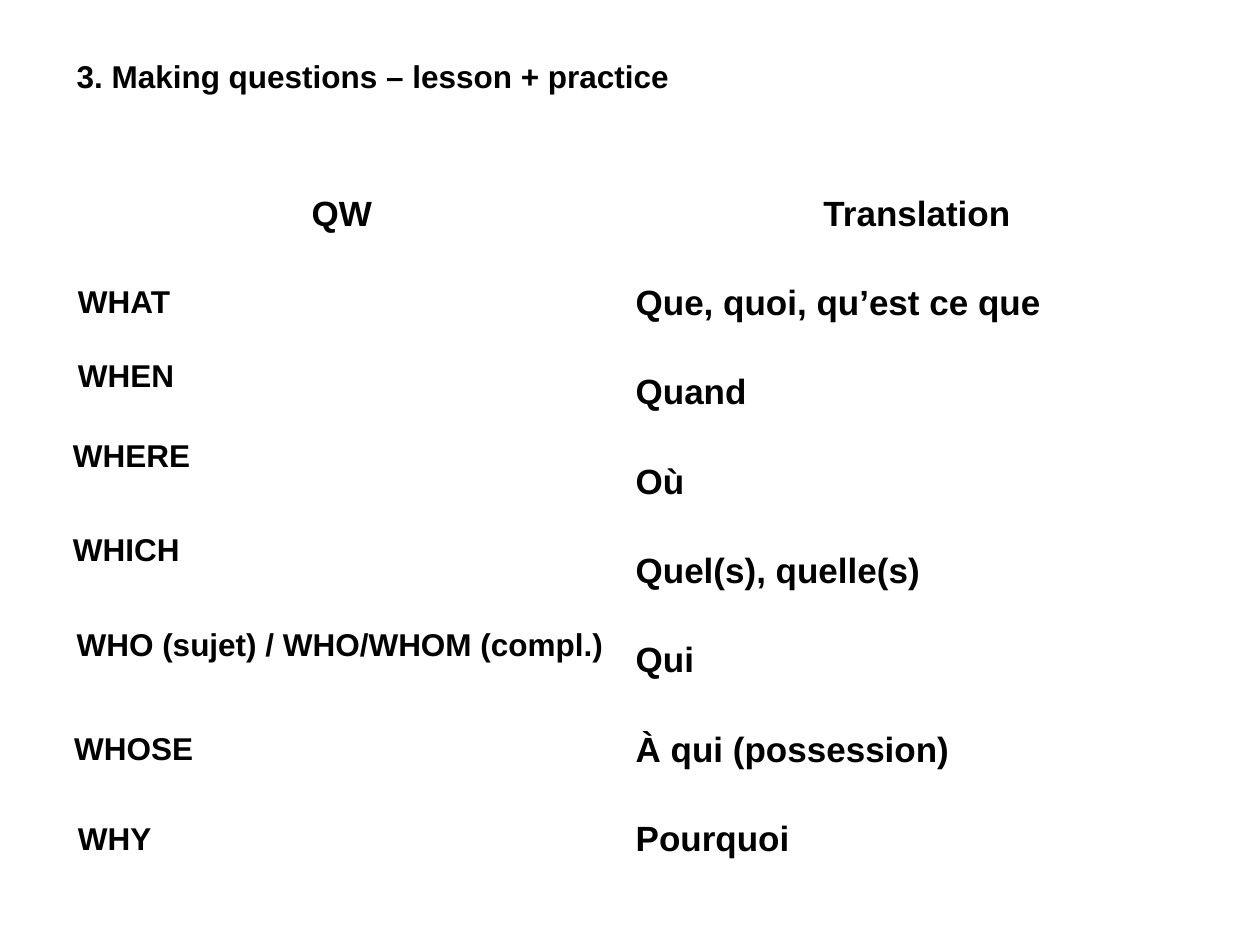
import pptx
import pptx.dml.color
import pptx.enum.text
import pptx.oxml
import pptx.oxml.ns
import pptx.util
from pptx.util import Inches

BLACK = pptx.dml.color.RGBColor(0x00, 0x00, 0x00)
WHITE = pptx.dml.color.RGBColor(0xFF, 0xFF, 0xFF)
FONT = "Arial"

HEADERS = ("QW", "Translation")
TRANSLATIONS = (
    "Que, quoi, qu’est ce que",
    "Quand",
    "Où",
    "Quel(s), quelle(s)",
    "Qui",
    "À qui (possession)",
    "Pourquoi",
)
# Question word, left, top, width
QUESTION_WORDS = (
    ("WHAT", 0.52, 2.19, 2.68),
    ("WHEN", 0.52, 2.78, 2.68),
    ("WHERE", 0.48, 3.41, 2.68),
    ("WHICH", 0.48, 4.16, 2.68),
    ("WHO (sujet) / WHO/WHOM (compl.)", 0.51, 4.91, 4.49),
    ("WHOSE", 0.49, 5.74, 2.68),
    ("WHY", 0.52, 6.45, 2.68),
)


def write_paragraph(paragraph, text, size):
    paragraph.text = text
    paragraph.font.name = FONT
    paragraph.font.size = pptx.util.Pt(size)
    paragraph.font.bold = True
    paragraph.font.color.rgb = BLACK


def add_label(slide, text, left, top, width, height=0.4):
    box = slide.shapes.add_textbox(
        Inches(left), Inches(top), Inches(width), Inches(height))
    frame = box.text_frame
    frame.word_wrap = True
    frame.auto_size = pptx.enum.text.MSO_AUTO_SIZE.SHAPE_TO_FIT_TEXT
    write_paragraph(frame.paragraphs[0], text, 18)
    return frame.paragraphs[0]


def set_borders(cell, top, bottom):
    """Draw white borders; top and bottom widths are in points."""
    properties = cell._tc.get_or_add_tcPr()
    widths = (("lnL", 1), ("lnR", 1), ("lnT", top), ("lnB", bottom))
    for position, (tag, width) in enumerate(widths):
        line = pptx.oxml.parse_xml(
            f'<a:{tag} {pptx.oxml.ns.nsdecls("a")} w="{pptx.util.Pt(width)}">'
            f'<a:solidFill><a:srgbClr val="{WHITE}"/></a:solidFill></a:{tag}>')
        properties.insert(position, line)


def write_cell(cell, text, centred):
    cell.margin_left = cell.margin_right = 0
    cell.margin_top = cell.margin_bottom = 0
    paragraph = cell.text_frame.paragraphs[0]
    write_paragraph(paragraph, text, 20)
    paragraph.line_spacing = 1.5
    if centred:
        paragraph.alignment = pptx.enum.text.PP_ALIGN.CENTER
    else:
        paragraph._p.get_or_add_pPr().set("marL", str(Inches(0.05)))


def add_translation_table(slide):
    row_count = len(TRANSLATIONS) + 1
    table = slide.shapes.add_table(
        row_count, 2, Inches(0.43), Inches(1.39),
        Inches(9.13), Inches(5.67)).table
    table.horz_banding = False

    # Borders are thicker below the header and above the last row
    thick_edges = (1, row_count - 1)
    for row_index, row in enumerate(table.rows):
        top = 3 if row_index in thick_edges else 1
        bottom = 3 if row_index + 1 in thick_edges else 1
        for cell in row.cells:
            cell.fill.background()
            set_borders(cell, top, bottom)

    for column_index, header in enumerate(HEADERS):
        write_cell(table.cell(0, column_index), header, centred=True)
    for row_index, translation in enumerate(TRANSLATIONS, start=1):
        write_cell(table.cell(row_index, 1), translation, centred=False)


def main():
    presentation = pptx.Presentation()
    presentation.slide_width = Inches(10)
    presentation.slide_height = Inches(7.5)
    slide = presentation.slides.add_slide(presentation.slide_layouts[6])

    # Table of translations
    add_translation_table(slide)

    # Title
    title = add_label(
        slide, "3. Making questions – lesson + practice", 0.51, 0.36, 5.12, 0.42)
    title.line_spacing = 1.15
    title.space_after = pptx.util.Pt(10)

    # Question words over the left column
    for text, left, top, width in QUESTION_WORDS:
        add_label(slide, text, left, top, width)

    presentation.save("out.pptx")


if __name__ == "__main__":
    main()
